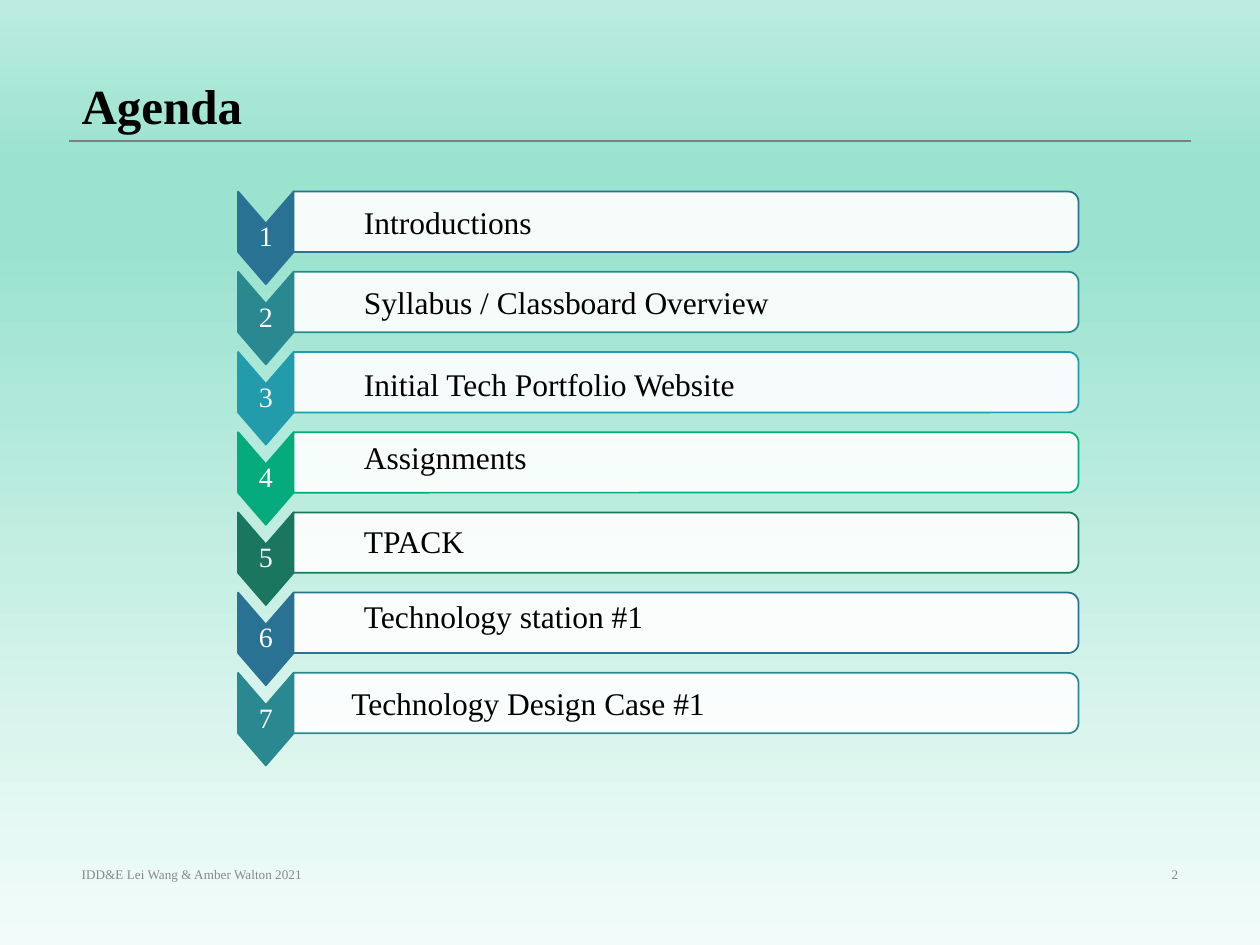
from lxml.etree import SubElement
from pptx import Presentation
from pptx.dml.color import RGBColor
from pptx.enum.shapes import MSO_CONNECTOR, MSO_SHAPE
from pptx.enum.text import MSO_ANCHOR, MSO_AUTO_SIZE, PP_ALIGN
from pptx.oxml.ns import qn
from pptx.util import Inches, Pt

WIDTH, HEIGHT = Inches(10), Inches(7.5)
COLUMNS, ROWS = 100, 75
FONT = "Times New Roman"
BLACK, WHITE, GREY = "000000", "FFFFFF", "888888"
BACKGROUND_STOPS = [
    (0, "F2FBFA"), (11, "E7F9F4"), (22, "DAF5ED"),
    (74, "9BE3CF"), (83, "9BE3CF"), (100, "BCECDF"),
]
STEP_COLORS = ["2A7293", "2A8990", "229BAB", "05AA7D", "1A765E"]
AGENDA = [
    ("Introductions", 27.9, 15.6, 15.5),
    ("Syllabus / Classboard Overview", 27.9, 22, 35.5),
    ("Initial Tech Portfolio Website", 27.9, 28.5, 33.7),
    ("Assignments", 27.9, 34.3, 15.1),
    ("TPACK", 27.9, 40.9, 10.7),
    ("Technology station #1", 27.9, 46.9, 24.4),
    ("Technology Design Case #1", 26.9, 53.8, 30.4),
]
FIRST_ROW, LAST_ROW = 15.2, 53.4
CHEVRON_LEFT, CHEVRON_WIDTH = 18.9, 4.4
CHEVRON_SIDE, CHEVRON_POINT = 4.8, 2.55
BAR_LENGTH, BAR_THICKNESS = 62.3, 4.8


def columns(count):
    return round(WIDTH * count / COLUMNS)


def rows(count):
    return round(HEIGHT * count / ROWS)


def color(code):
    return RGBColor.from_string(code)


def write_text(shape, text, size=18, ink=BLACK, bold=False, align=PP_ALIGN.LEFT,
               anchor=MSO_ANCHOR.TOP, spacing=1.0, insets=(0.1, 0.05), grow=False):
    frame = shape.text_frame
    frame.word_wrap = True
    frame.auto_size = MSO_AUTO_SIZE.SHAPE_TO_FIT_TEXT if grow else MSO_AUTO_SIZE.NONE
    frame.vertical_anchor = anchor
    frame.margin_left = frame.margin_right = Inches(insets[0])
    frame.margin_top = frame.margin_bottom = Inches(insets[1])
    para = frame.paragraphs[0]
    para.alignment = align
    para.line_spacing = spacing
    span = para.add_run()
    span.text = text
    span.font.name = FONT
    span.font.size = Pt(size)
    span.font.bold = bold
    span.font.color.rgb = color(ink)


def add_text(page, text, left, top, width, height, **format):
    box = page.shapes.add_textbox(columns(left), rows(top), columns(width), rows(height))
    write_text(box, text, **format)


def paint(shape, fill, line):
    shape.shadow.inherit = False
    shape.fill.solid()
    shape.fill.fore_color.rgb = color(fill)
    shape.line.color.rgb = color(line)
    shape.line.width = Pt(1)


def set_background(page):
    fill = page.background.fill
    fill.gradient()
    fill.gradient_angle = 90
    stops = page.element.find(".//" + qn("a:gsLst"))
    for stop in list(stops):
        stops.remove(stop)
    for position, code in BACKGROUND_STOPS:
        stop = SubElement(stops, qn("a:gs"), pos=str(position * 1000))
        SubElement(stop, qn("a:srgbClr"), val=code)


def add_rule(page, left, right, top):
    rule = page.shapes.add_connector(
        MSO_CONNECTOR.STRAIGHT, columns(left), rows(top), columns(right), rows(top))
    rule.line.color.rgb = color("7F7F7F")
    rule.line.width = Pt(0.75)
    SubElement(rule.element.spPr, qn("a:effectLst"))


def add_chevron(page, number, top, tint):
    left, right = CHEVRON_LEFT, CHEVRON_LEFT + CHEVRON_WIDTH
    middle, bottom = (left + right) / 2, top + CHEVRON_SIDE
    outline = [
        (right, top), (right, bottom), (middle, bottom + CHEVRON_POINT),
        (left, bottom), (left, top), (middle, top + CHEVRON_POINT),
    ]
    points = [(columns(x), rows(y)) for x, y in outline]
    builder = page.shapes.build_freeform(*points[0])
    builder.add_line_segments(points[1:], close=True)
    chevron = builder.convert_to_shape()
    paint(chevron, tint, tint)
    write_text(chevron, str(number), size=16, ink=WHITE, align=PP_ALIGN.CENTER,
               anchor=MSO_ANCHOR.MIDDLE, spacing=0.9, insets=(0.01, 0.23))


def add_bar(page, top, tint):
    center_x = CHEVRON_LEFT + CHEVRON_WIDTH + BAR_LENGTH / 2
    center_y = top + BAR_THICKNESS / 2
    bar = page.shapes.add_shape(
        MSO_SHAPE.ROUND_2_SAME_RECTANGLE,
        columns(center_x - BAR_THICKNESS / 2), rows(center_y - BAR_LENGTH / 2),
        columns(BAR_THICKNESS), rows(BAR_LENGTH))
    bar.rotation = 90
    bar.adjustments[0] = 0.17
    bar.adjustments[1] = 0
    paint(bar, WHITE, tint)
    white = bar.element.spPr.find(qn("a:solidFill")).find(qn("a:srgbClr"))
    SubElement(white, qn("a:alpha"), val="90000")


def main():
    deck = Presentation()
    deck.slide_width, deck.slide_height = WIDTH, HEIGHT
    page = deck.slides.add_slide(deck.slide_layouts[6])
    set_background(page)
    add_rule(page, 5.5, 94.5, 11.2)
    add_text(page, "Agenda", 5.5, 0, 89, 11.2, size=28, bold=True,
             anchor=MSO_ANCHOR.BOTTOM, spacing=0.9)
    footer = {"size": 7.5, "ink": GREY, "anchor": MSO_ANCHOR.MIDDLE}
    add_text(page, "IDD&E Lei Wang & Amber Walton 2021", 5.5, 68.2, 34, 2.3, **footer)
    add_text(page, "2", 70.6, 68.2, 23.9, 2.3, align=PP_ALIGN.RIGHT, **footer)
    pitch = (LAST_ROW - FIRST_ROW) / (len(AGENDA) - 1)
    for index in range(len(AGENDA)):
        top = FIRST_ROW + index * pitch
        tint = STEP_COLORS[index % len(STEP_COLORS)]
        add_chevron(page, index + 1, top, tint)
        add_bar(page, top, tint)
    for topic, left, top, width in AGENDA:
        add_text(page, topic, left, top, width, 4, grow=True)
    deck.save("out.pptx")


if __name__ == "__main__":
    main()
